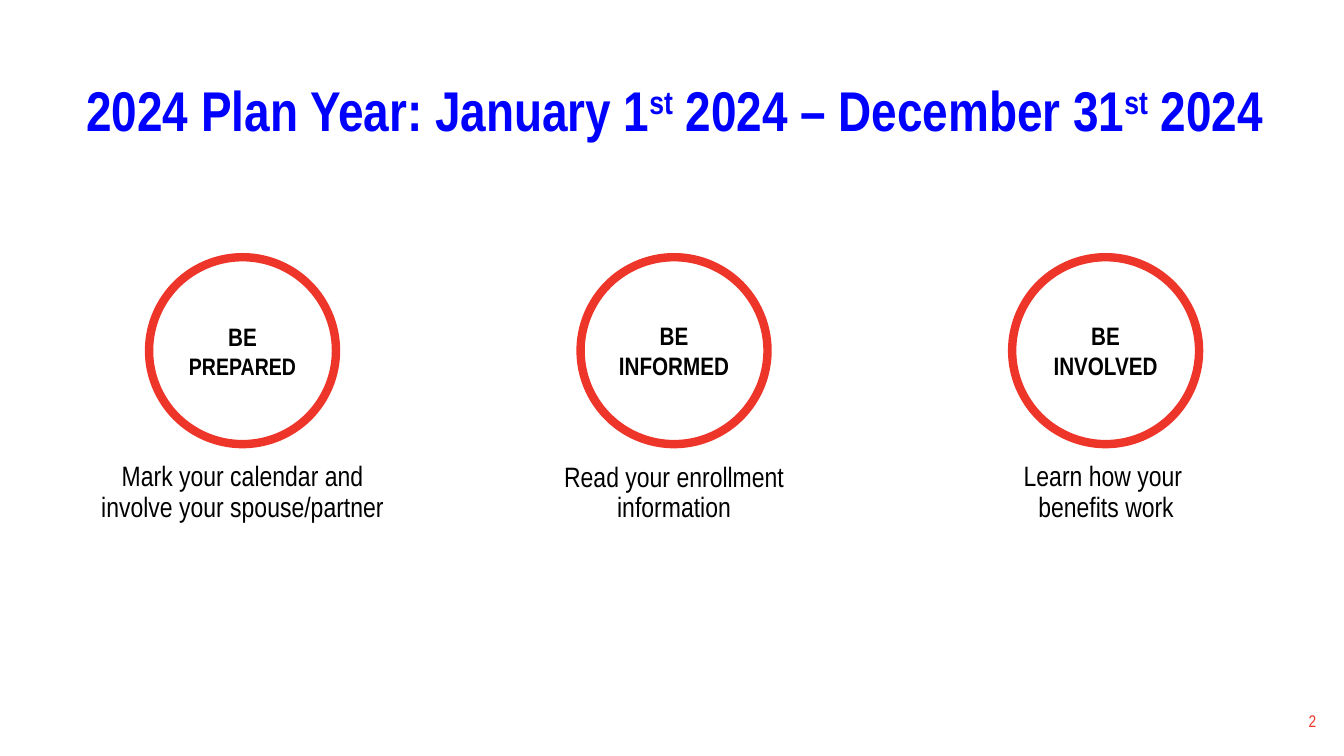
from dataclasses import dataclass

from lxml import etree
from pptx import Presentation
from pptx import util as u
from pptx.dml.color import RGBColor
from pptx.enum import shapes, text
from pptx.oxml.ns import qn

FACE = "Arial Narrow"
BLUE, RED, BLACK, WHITE = "0000FF", "EE352A", "000000", "FFFFFF"
MID, TOP = text.MSO_ANCHOR.MIDDLE, text.MSO_ANCHOR.TOP
CENTER, RIGHT = text.PP_ALIGN.CENTER, text.PP_ALIGN.RIGHT

# Layout in px, 96 to the inch
RING, RING_TOP = 178, 245
FIRST, STEP = 231, 411
NOTE_TOP = 436


@dataclass
class Step:
    word: str
    size: int
    note: str
    width: int
    height: int
    body: bool = False


STEPS = [
    Step("PREPARED", 17, "Mark your calendar and involve your spouse/partner", 300, 68),
    Step("INFORMED", 18, "Read your enrollment information", 292, 127, True),
    Step("INVOLVED", 18, "Learn how your \vbenefits work", 287, 105),
]


def px(n: int) -> int:
    return u.Emu(n * 9525)


def color(code: str) -> RGBColor:
    return RGBColor.from_string(code)


def place(shape, x: int, y: int, w: int, h: int) -> None:
    shape.left, shape.top, shape.width, shape.height = map(px, (x, y, w, h))


def style(shape, size: int, tint: str, bold: bool = False, align=CENTER,
          anchor=MID, lines: float = 1.0):
    """Format the shape's only paragraph and return it."""
    frame = shape.text_frame
    frame.word_wrap = True
    frame.auto_size = text.MSO_AUTO_SIZE.NONE
    frame.vertical_anchor = anchor
    para = frame.paragraphs[0]
    para.alignment, para.line_spacing, para.space_before = align, lines, u.Pt(0)
    font = para.font
    font.name, font.size, font.bold = FACE, u.Pt(size), bold
    font.color.rgb = color(tint)
    return para


def title(slide) -> None:
    head = slide.shapes.title
    place(head, 22, 38, 1241, 139)
    para = style(head, 40, BLUE, True, lines=0.9)
    for i, part in enumerate(["2024 Plan Year: January 1", "st",
                              " 2024 – December 31", "st", " 2024"]):
        run = para.add_run()
        run.text = part
        if i % 2:
            run._r.get_or_add_rPr().set("baseline", "30000")


def ring(slide, mid: int, step: Step) -> None:
    oval = slide.shapes.add_shape(shapes.MSO_SHAPE.OVAL, 0, 0, 0, 0)
    place(oval, mid - RING // 2, RING_TOP, RING, RING)
    oval.shadow.inherit = False
    oval.fill.solid()
    oval.fill.fore_color.rgb = color(WHITE)
    oval.line.color.rgb = color(RED)
    oval.line.width = u.Pt(6)
    para = style(oval, 18, BLACK, True)
    for word, size in (("BE ", 18), (step.word, step.size)):
        run = para.add_run()
        run.text = word
        run.font.size = u.Pt(size)
        run.font.color.rgb = color(BLACK)


def note(slide, mid: int, step: Step) -> None:
    if step.body:
        box = slide.placeholders[1]
        props = box.text_frame.paragraphs[0]._p.get_or_add_pPr()
        props.set("marL", "0")
        props.set("indent", "0")
        etree.SubElement(props, qn("a:buNone"))
    else:
        box = slide.shapes.add_textbox(0, 0, 0, 0)
    place(box, mid - step.width // 2, NOTE_TOP, step.width, step.height)
    style(box, 20, BLACK, anchor=TOP, lines=0.9).text = step.note


def main() -> None:
    deck = Presentation()
    deck.slide_width, deck.slide_height = px(1280), px(720)
    slide = deck.slides.add_slide(deck.slide_layouts[1])

    title(slide)

    # Three steps: ring with caption
    for i, step in enumerate(STEPS):
        mid = FIRST + i * STEP
        ring(slide, mid, step)
        note(slide, mid, step)

    # Page number
    page = slide.shapes.add_textbox(0, 0, 0, 0)
    place(page, 975, 667, 288, 38)
    style(page, 12, RED, align=RIGHT).text = "2"

    deck.save("out.pptx")


if __name__ == "__main__":
    main()
